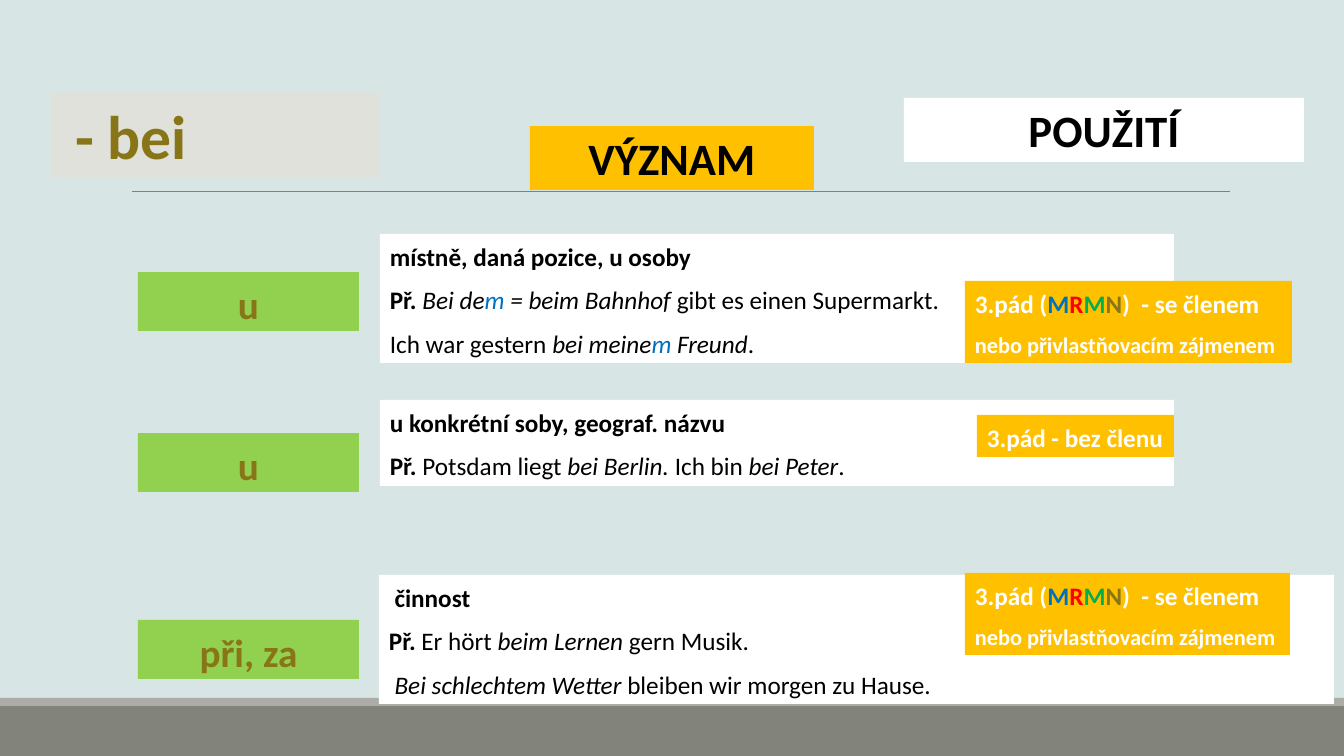
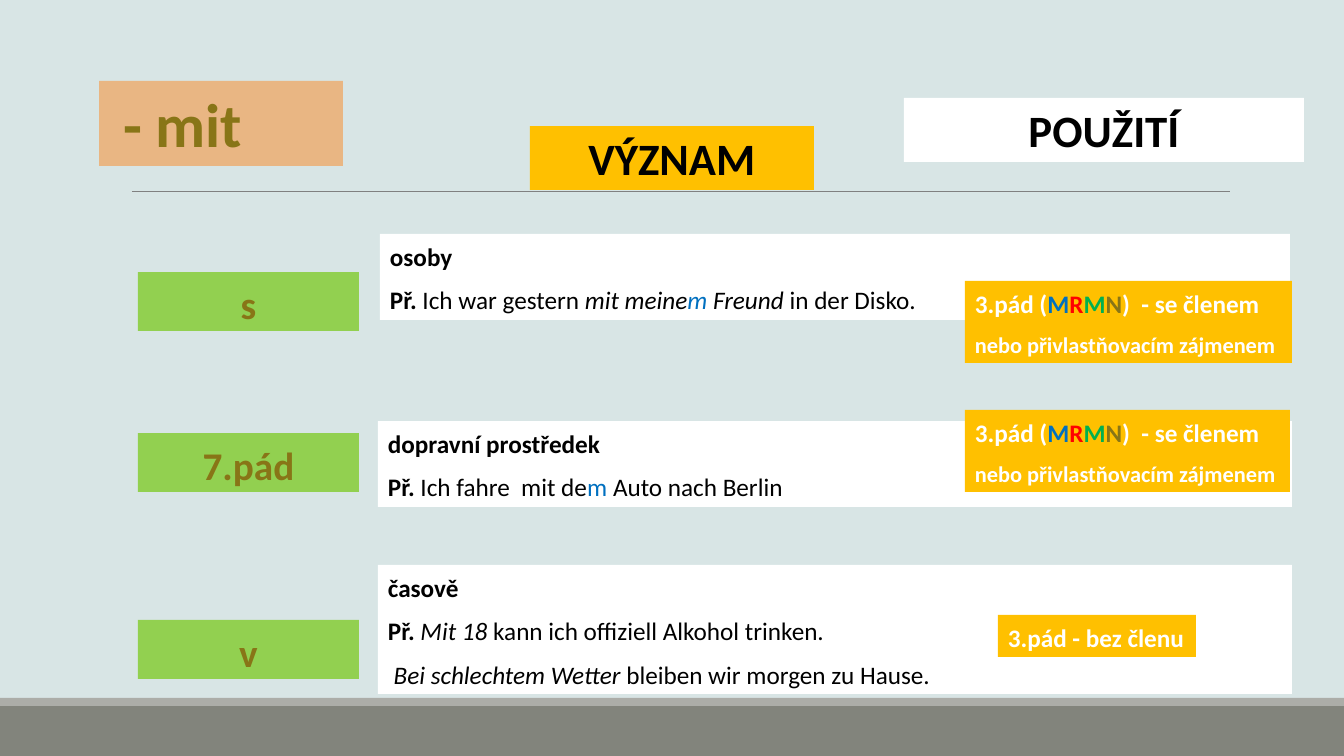
from dataclasses import dataclass
from typing import Any, NamedTuple

from lxml.etree import SubElement
from pptx import Presentation
from pptx.dml.color import RGBColor
from pptx.enum.shapes import MSO_CONNECTOR, MSO_SHAPE
from pptx.enum.text import MSO_ANCHOR, MSO_AUTO_SIZE, PP_ALIGN
from pptx.oxml.ns import qn
from pptx.slide import Slide
from pptx.text.text import TextFrame
from pptx.util import Emu, Pt

EMU_PER_PX = 914400 / 100.8
SLIDE_WIDTH, SLIDE_HEIGHT = 1344, 756


def px(length: int) -> Emu:
    return Emu(round(length * EMU_PER_PX))


def rgb(code: str) -> RGBColor:
    return RGBColor.from_string(code)


@dataclass(frozen=True)
class Theme:
    font: str = "Calibri"
    background: RGBColor = rgb("D8E5E5")
    footer: RGBColor = rgb("82847C")
    footer_edge: RGBColor = rgb("ACADA8")
    rule: RGBColor = rgb("808080")
    white: RGBColor = rgb("FFFFFF")
    black: RGBColor = rgb("000000")
    olive: RGBColor = rgb("887517")
    amber: RGBColor = rgb("FFC000")
    lime: RGBColor = rgb("92D050")
    stone: RGBColor = rgb("E1E1DB")
    peach: RGBColor = rgb("E9B683")
    blue: RGBColor = rgb("0070C0")
    red: RGBColor = rgb("FF0000")
    green: RGBColor = rgb("00B050")
    title_size: Pt = Pt(44)
    heading_size: Pt = Pt(32)
    label_size: Pt = Pt(28)
    body_size: Pt = Pt(18)
    small_size: Pt = Pt(16)
    rule_width: Pt = Pt(0.5)


THEME = Theme()
Format = dict[str, Any]

BOLD: Format = {"bold": True}
PLAIN: Format = {"bold": False}
ITALIC: Format = {"bold": False, "italic": True}
ENDING: Format = {"bold": False, "rgb": THEME.blue}
ITALIC_ENDING: Format = {**ITALIC, "rgb": THEME.blue}

TITLE: Format = {"bold": True, "size": THEME.title_size, "rgb": THEME.olive}
HEADING: Format = {"bold": True, "size": THEME.heading_size, "rgb": THEME.black}
LABEL: Format = {"bold": True, "size": THEME.label_size, "rgb": THEME.olive}
BODY: Format = {"size": THEME.body_size, "rgb": THEME.black}
NOTE: Format = {"bold": True, "size": THEME.body_size, "rgb": THEME.white}

SPACED: Format = {"line_spacing": 1.07, "space_after": Pt(8)}
CENTERED: Format = {"alignment": PP_ALIGN.CENTER}


class Area(NamedTuple):
    left: int
    top: int
    width: int
    height: int

    def emu(self) -> list[Emu]:
        return [px(length) for length in self]


class Run(NamedTuple):
    text: str
    format: Format = {}


Line = list[Run]


class Panel(NamedTuple):
    area: Area
    lines: list[Line]


class Note(NamedTuple):
    area: Area
    lines: list[Line]


@dataclass(frozen=True)
class Preposition:
    title: str
    title_area: Area
    title_fill: RGBColor
    labels: tuple[str, str, str]
    panels: list[Panel]
    notes: list[Note]


LABEL_TOPS = (272, 433, 620)
EXAMPLE = Run("Př. ", BOLD)
WITH_ARTICLE: list[Line] = [
    [
        Run("3.pád ("),
        Run("M", {"rgb": THEME.blue}),
        Run("R", {"rgb": THEME.red}),
        Run("M", {"rgb": THEME.green}),
        Run("N", {"rgb": THEME.olive}),
        Run(")  - se členem"),
    ],
    [Run("nebo přivlastňovacím zájmenem", {"size": THEME.small_size})],
]
WITHOUT_ARTICLE: list[Line] = [[Run("3.pád - bez členu")]]
WEATHER: Line = [
    Run(" Bei schlechtem Wetter", ITALIC),
    Run(" bleiben wir morgen zu Hause.", PLAIN),
]

PREPOSITIONS = [
    Preposition(
        "- bei", Area(51, 93, 328, 85), THEME.stone, ("u", "u", "při, za"),
        [
            Panel(Area(380, 234, 794, 129), [
                [Run("místně, daná pozice, u osoby", BOLD)],
                [
                    EXAMPLE,
                    Run("Bei de", ITALIC),
                    Run("m", ITALIC_ENDING),
                    Run(" = beim Bahnhof", ITALIC),
                    Run(" gibt es einen Supermarkt.", PLAIN),
                ],
                [
                    Run("Ich war gestern ", PLAIN),
                    Run("bei meine", ITALIC),
                    Run("m", ITALIC_ENDING),
                    Run(" Freund", ITALIC),
                    Run(".", PLAIN),
                ],
            ]),
            Panel(Area(380, 400, 794, 86), [
                [Run("u konkrétní soby, geograf. názvu", BOLD)],
                [
                    EXAMPLE,
                    Run("Potsdam liegt ", PLAIN),
                    Run("bei Berlin. ", ITALIC),
                    Run("Ich bin ", PLAIN),
                    Run("bei Peter", ITALIC),
                    Run(".", PLAIN),
                ],
            ]),
            Panel(Area(379, 575, 955, 129), [
                [Run(" činnost", BOLD)],
                [
                    EXAMPLE,
                    Run("Er hört ", PLAIN),
                    Run("beim Lernen", ITALIC),
                    Run(" gern Musik.", PLAIN),
                ],
                WEATHER,
            ]),
        ],
        [
            Note(Area(965, 281, 327, 82), WITH_ARTICLE),
            Note(Area(977, 415, 197, 42), WITHOUT_ARTICLE),
            Note(Area(965, 573, 325, 82), WITH_ARTICLE),
        ],
    ),
    Preposition(
        "- mit", Area(99, 81, 244, 85), THEME.peach, ("s", "7.pád", "v"),
        [
            Panel(Area(380, 234, 910, 86), [
                [Run("osoby", BOLD)],
                [
                    EXAMPLE,
                    Run("Ich war gestern ", PLAIN),
                    Run("mit meine", ITALIC),
                    Run("m", ITALIC_ENDING),
                    Run(" Freund ", ITALIC),
                    Run("in der Disko.", PLAIN),
                ],
            ]),
            Panel(Area(378, 421, 914, 86), [
                [Run("dopravní prostředek", BOLD)],
                [
                    EXAMPLE,
                    Run("Ich fahre  mit de", PLAIN),
                    Run("m ", ENDING),
                    Run("Auto nach Berlin", PLAIN),
                ],
            ]),
            Panel(Area(378, 565, 914, 129), [
                [Run("časově", BOLD)],
                [
                    EXAMPLE,
                    Run("Mit 18 ", ITALIC),
                    Run("kann ich offiziell Alkohol trinken.", PLAIN),
                ],
                WEATHER,
            ]),
        ],
        [
            Note(Area(965, 281, 327, 82), WITH_ARTICLE),
            Note(Area(965, 410, 325, 82), WITH_ARTICLE),
            Note(Area(998, 615, 198, 42), WITHOUT_ARTICLE),
        ],
    ),
]


def write_lines(frame: TextFrame, lines: list[Line], base: Format, layout: Format) -> None:
    for index, line in enumerate(lines):
        paragraph = frame.add_paragraph() if index else frame.paragraphs[0]
        for name, value in layout.items():
            setattr(paragraph, name, value)
        for text, extra in line:
            run = paragraph.add_run()
            run.text = text
            for name, value in {"name": THEME.font, **base, **extra}.items():
                setattr(run.font.color if name == "rgb" else run.font, name, value)


def draw_box(slide: Slide, area: Area, fill: RGBColor, lines: list[Line],
             base: Format, layout: Format, wrap: bool = True) -> None:
    box = slide.shapes.add_textbox(*area.emu())
    box.fill.solid()
    box.fill.fore_color.rgb = fill
    box.text_frame.word_wrap = wrap
    box.text_frame.auto_size = MSO_AUTO_SIZE.SHAPE_TO_FIT_TEXT
    write_lines(box.text_frame, lines, base, layout)


def draw_band(slide: Slide, area: Area, fill: RGBColor) -> None:
    band = slide.shapes.add_shape(MSO_SHAPE.RECTANGLE, *area.emu())
    band.shadow.inherit = False
    band.fill.solid()
    band.fill.fore_color.rgb = fill
    band.line.fill.background()


def draw_frame(slide: Slide) -> None:
    draw_band(slide, Area(0, 706, SLIDE_WIDTH, 50), THEME.footer)
    draw_band(slide, Area(0, 698, SLIDE_WIDTH, 8), THEME.footer_edge)
    rule = slide.shapes.add_connector(MSO_CONNECTOR.STRAIGHT, px(132), px(191), px(1230), px(191))
    rule.line.color.rgb = THEME.rule
    rule.line.width = THEME.rule_width
    SubElement(rule._element.spPr, qn("a:effectLst"))


def draw_title(slide: Slide, preposition: Preposition) -> None:
    title = slide.shapes.title
    title.left, title.top, title.width, title.height = preposition.title_area.emu()
    title.fill.solid()
    title.fill.fore_color.rgb = preposition.title_fill
    settings = {"margin_left": px(24), "vertical_anchor": MSO_ANCHOR.TOP,
                "word_wrap": True, "auto_size": MSO_AUTO_SIZE.NONE}
    for name, value in settings.items():
        setattr(title.text_frame, name, value)
    write_lines(title.text_frame, [[Run(preposition.title)]], TITLE, {"alignment": PP_ALIGN.LEFT})


def draw_preposition(slide: Slide, preposition: Preposition) -> None:
    draw_frame(slide)
    draw_title(slide, preposition)
    for panel in preposition.panels:
        draw_box(slide, panel.area, THEME.white, panel.lines, BODY, SPACED)
    draw_box(slide, Area(904, 98, 400, 64), THEME.white, [[Run("POUŽITÍ")]], HEADING, CENTERED)
    draw_box(slide, Area(530, 126, 284, 64), THEME.amber, [[Run("VÝZNAM")]], HEADING, CENTERED)
    for top, label in zip(LABEL_TOPS, preposition.labels):
        draw_box(slide, Area(138, top, 221, 59), THEME.lime, [[Run(label)]],
                 LABEL, {**SPACED, **CENTERED})
    for note in preposition.notes:
        draw_box(slide, note.area, THEME.amber, note.lines, NOTE, SPACED, wrap=False)


def main() -> None:
    deck = Presentation()
    deck.slide_width, deck.slide_height = px(SLIDE_WIDTH), px(SLIDE_HEIGHT)
    backdrop = deck.slide_master.background.fill
    backdrop.solid()
    backdrop.fore_color.rgb = THEME.background
    title_only = deck.slide_layouts.get_by_name("Title Only")
    for preposition in PREPOSITIONS:
        draw_preposition(deck.slides.add_slide(title_only), preposition)
    deck.save("out.pptx")


if __name__ == "__main__":
    main()
